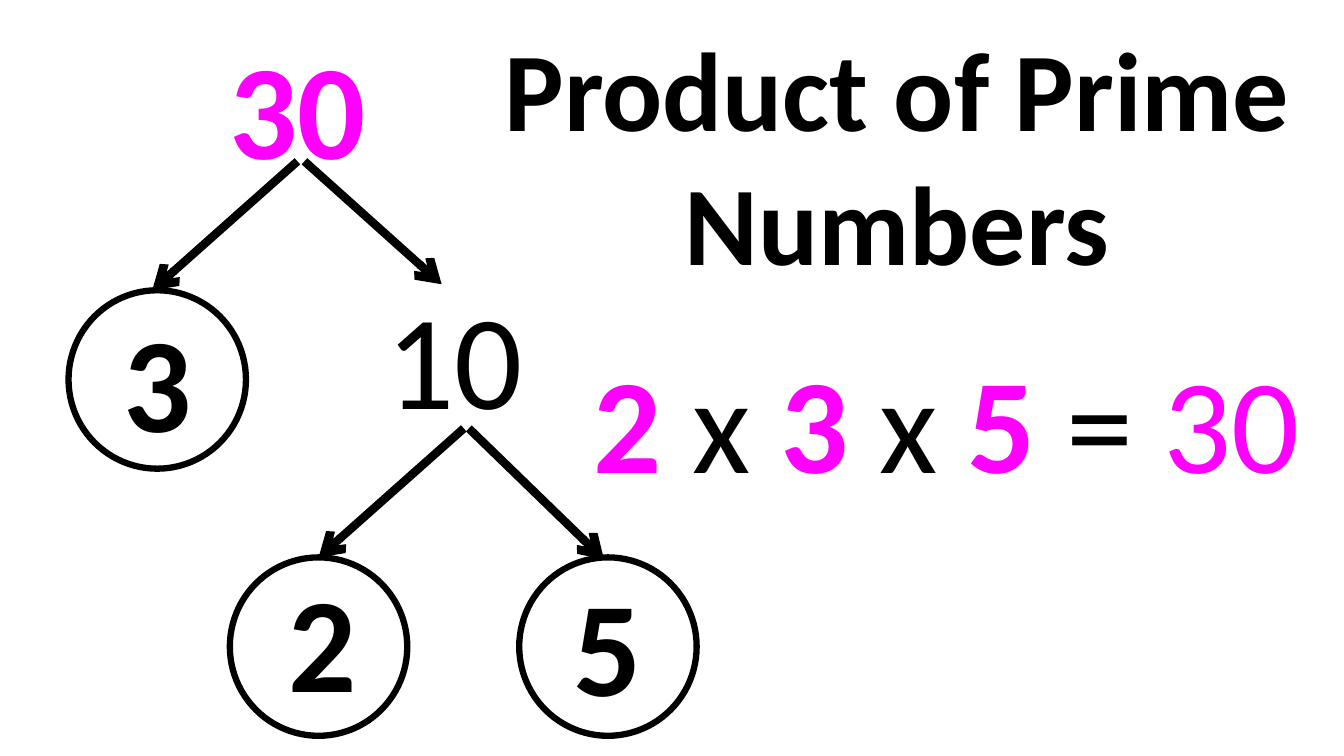
"""Build a slide showing 30 as a product of prime numbers with a factor tree."""
from dataclasses import dataclass

from lxml.etree import SubElement
from pptx import Presentation
from pptx.dml.color import RGBColor
from pptx.enum.shapes import MSO_CONNECTOR, MSO_SHAPE
from pptx.enum.text import MSO_AUTO_SIZE, PP_ALIGN
from pptx.oxml.ns import qn
from pptx.slide import Slide
from pptx.util import Inches, Pt

BLACK = "000000"
MAGENTA = "FF00FF"
FONT = "Calibri"
CIRCLE_W, CIRCLE_H = 1.76, 1.77


@dataclass(frozen=True)
class Term:
    text: str
    color: str = BLACK
    bold: bool = True


@dataclass(frozen=True)
class Label:
    left: float
    top: float
    width: float
    height: float
    terms: tuple[Term, ...]
    size: int = 96


@dataclass(frozen=True)
class Branch:
    x1: float
    y1: float
    x2: float
    y2: float


@dataclass(frozen=True)
class Circle:
    left: float
    top: float


PRODUCT = (
    Term("2 ", MAGENTA), Term("x ", bold=False),
    Term("3 ", MAGENTA), Term("x ", bold=False),
    Term("5 ", MAGENTA), Term("= ", bold=False),
    Term("30", MAGENTA, bold=False),
)
LABELS = [
    Label(1.93, 0.2, 2.04, 1.72, (Term("30", MAGENTA),)),
    Label(1.06, 2.91, 1.01, 1.72, (Term("3"),)),
    Label(3.63, 2.68, 1.76, 1.72, (Term("10", bold=False),)),
    Label(5.53, 5.53, 1, 1.72, (Term("5"),)),
    Label(2.7, 5.49, 1, 1.72, (Term("2"),)),
    Label(5.59, 3.31, 7.6, 1.72, PRODUCT),
    Label(4.65, 0.14, 8.5, 2.79, (Term("Product of Prime Numbers"),), 80),
]
BRANCHES = [
    Branch(2.95, 1.6, 1.51, 2.88),
    Branch(3.02, 1.6, 4.38, 2.82),
    Branch(4.6, 4.25, 3.16, 5.53),
    Branch(4.65, 4.25, 5.99, 5.55),
]
CIRCLES = [Circle(0.68, 2.88), Circle(2.28, 5.53), Circle(5.15, 5.53)]


def rgb(color: str) -> RGBColor:
    """Turn a hex string into a colour."""
    return RGBColor.from_string(color)


def add_label(s: Slide, label: Label) -> None:
    """Draw one centred text made of coloured terms."""
    sp = s.shapes.add_textbox(Inches(label.left), Inches(label.top),
                              Inches(label.width), Inches(label.height))
    tf = sp.text_frame
    tf.word_wrap = True
    tf.auto_size = MSO_AUTO_SIZE.SHAPE_TO_FIT_TEXT
    p = tf.paragraphs[0]
    p.alignment = PP_ALIGN.CENTER
    p.font.name = FONT
    p.font.size = Pt(label.size)
    for term in label.terms:
        r = p.add_run()
        r.text = term.text
        r.font.bold = term.bold
        r.font.color.rgb = rgb(term.color)


def add_branch(s: Slide, branch: Branch) -> None:
    """Draw one arrow of the factor tree."""
    cxn = s.shapes.add_connector(
        MSO_CONNECTOR.STRAIGHT, Inches(branch.x1), Inches(branch.y1),
        Inches(branch.x2), Inches(branch.y2))
    cxn.line.width = Pt(6)
    cxn.line.color.rgb = rgb(BLACK)
    sp_pr = cxn.element.spPr
    SubElement(sp_pr.find(qn("a:ln")), qn("a:tailEnd"), type="arrow")
    SubElement(sp_pr, qn("a:effectLst"))


def add_circle(s: Slide, circle: Circle) -> None:
    """Draw the ring around a prime factor."""
    sp = s.shapes.add_shape(MSO_SHAPE.OVAL, Inches(circle.left), Inches(circle.top),
                            Inches(CIRCLE_W), Inches(CIRCLE_H))
    sp.shadow.inherit = False
    sp.fill.background()
    sp.line.width = Pt(4.5)
    sp.line.color.rgb = rgb(BLACK)


def main() -> None:
    """Build and save the slide."""
    prs = Presentation()
    prs.slide_width, prs.slide_height = Inches(13.33), Inches(7.5)
    s = prs.slides.add_slide(prs.slide_layouts[6])
    for branch in BRANCHES:
        add_branch(s, branch)
    for circle in CIRCLES:
        add_circle(s, circle)
    for label in LABELS:
        add_label(s, label)
    prs.save("out.pptx")


if __name__ == "__main__":
    main()
